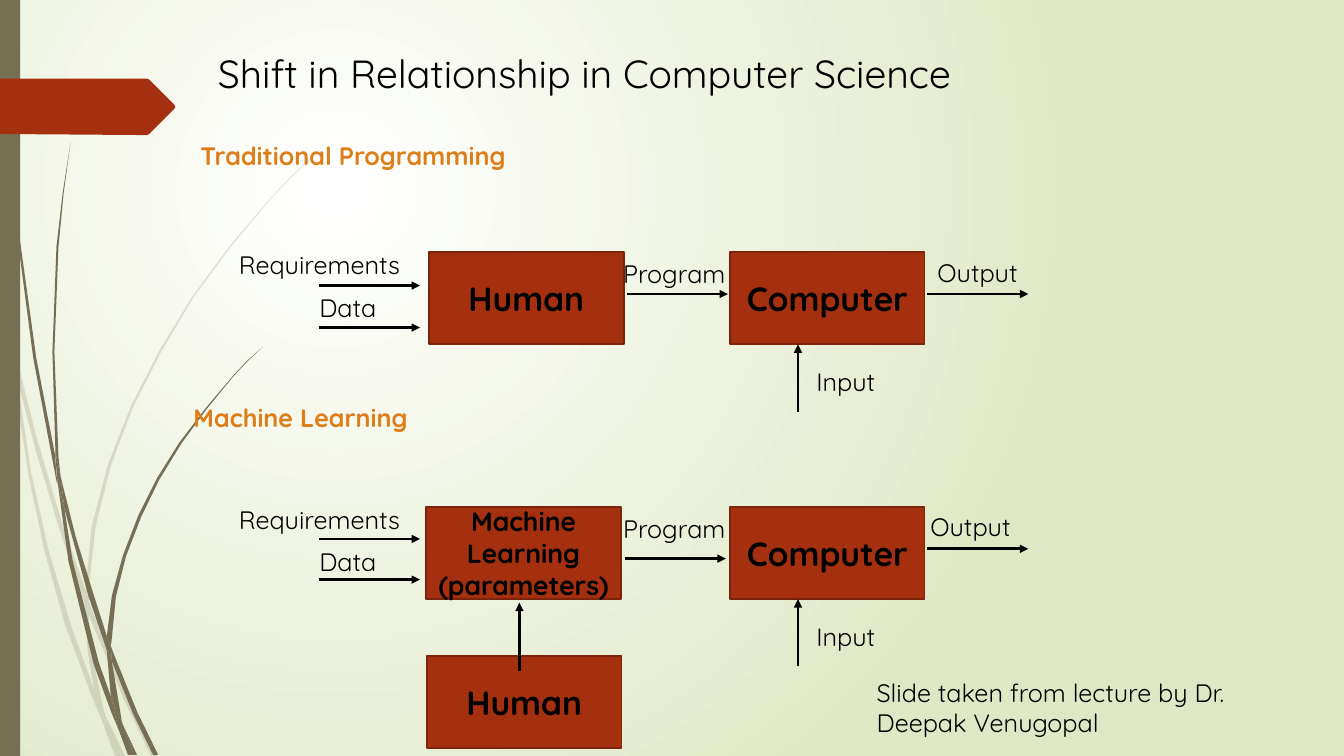
from lxml.etree import SubElement
from pptx import Presentation
from pptx.dml.color import RGBColor
from pptx.enum.shapes import MSO_CONNECTOR as Connector, MSO_SHAPE as Preset
from pptx.enum.text import MSO_ANCHOR as Anchor, MSO_AUTO_SIZE as AutoSize, PP_ALIGN as Align
from pptx.oxml.ns import qn
from pptx.util import Pt

FONT = "Quicksand"
BLACK, RUST, DARK_RUST = "000000", "A53010", "7A240C"
ORANGE, OLIVE, WHITE, PALE_GREEN = "DE7E18", "766F54", "FFFFFF", "DFE8C4"
BOX_WIDTH, BOX_HEIGHT = 139, 66
FLOW_STEP = 182  # from the upper flow to the lower one

# Outlines on a grid of 0.72 pt
GRID = Pt(0.72)
FAINT_WISPS = [
    [(11, 350), (9, 322), (0, 282), (0, 299), (10, 344)],
    [(58, 522), (84, 599), (85, 586), (62, 520), (36, 433), (14, 345), (17, 376), (36, 449)],
    [(92, 607), (88, 596), (88, 610), (123, 694), (150, 750), (155, 750), (127, 692)],
    [(119, 750), (124, 750), (105, 711)],
    [(93, 683), (70, 619), (48, 545), (31, 469), (17, 376), (11, 350), (19, 410), (28, 470),
     (44, 546), (65, 621), (92, 693), (101, 714), (99, 707)],
    [(84, 599), (87, 646), (93, 683), (96, 692), (105, 711), (103, 706), (91, 646), (88, 610),
     (88, 608)],
    [(88, 584), (95, 522), (110, 462), (132, 404), (160, 349), (192, 295), (229, 245),
     (268, 198), (290, 175), (312, 154), (312, 153), (289, 175), (268, 197), (228, 244),
     (191, 294), (158, 348), (130, 403), (107, 461), (91, 522), (85, 584), (85, 586), (88, 596)],
    [(101, 714), (114, 750), (119, 750)],
    [(88, 608), (88, 610), (88, 596), (85, 586), (84, 599)],
    [(96, 692), (93, 683), (99, 707), (101, 714), (119, 750), (105, 711)],
]
SOLID_WISPS = [
    [(7, 110), (11, 171), (17, 233), (33, 355), (56, 477), (57, 481), (55, 457), (55, 453),
     (36, 355), (19, 232), (8, 109), (5, 48), (4, 0), (3, 0), (4, 48)],
    [(88, 592), (106, 645), (106, 633), (106, 631), (93, 590), (75, 532), (60, 472), (64, 505)],
    [(113, 649), (110, 641), (111, 656), (132, 708), (152, 749), (157, 749), (136, 706)],
    [(110, 691), (98, 657), (72, 556), (64, 505), (57, 477), (68, 557), (93, 659), (111, 708),
     (117, 722), (116, 717)],
    [(60, 472), (58, 453), (54, 349), (58, 245), (63, 193), (70, 141), (62, 193), (56, 245),
     (52, 349), (55, 449)],
    [(133, 749), (136, 749), (122, 719)],
    [(57, 477), (64, 505), (60, 472), (55, 449), (55, 453)],
    [(111, 633), (115, 592), (125, 552), (140, 513), (158, 476), (180, 440), (205, 406),
     (231, 374), (245, 359), (261, 344), (245, 358), (231, 373), (204, 405), (178, 439),
     (156, 474), (137, 512), (122, 551), (111, 591), (106, 631), (110, 641)],
    [(117, 722), (127, 749), (131, 749)],
    [(106, 645), (110, 691), (116, 706), (122, 719), (121, 716), (111, 656), (109, 651)],
    [(106, 645), (109, 651), (111, 656), (110, 641), (106, 631), (106, 633)],
    [(116, 706), (110, 691), (116, 717), (117, 722), (130, 749), (133, 749), (122, 719)],
]
MARKER = [(173, 108), (148, 133), (146, 134), (136, 134), (0, 133), (0, 78), (136, 78),
          (146, 78), (148, 79), (173, 104), (174, 106)]


def rgb(value):
    return RGBColor.from_string(value)


def apply_format(target, values):
    for attribute, value in values.items():
        setattr(target, attribute, value)


def write(paragraph, text, size=18, color=BLACK, bold=False, **layout):
    run = paragraph.add_run()
    run.text = text
    apply_format(run.font, {"name": FONT, "size": Pt(size), "bold": bold})
    run.font.color.rgb = rgb(color)
    apply_format(paragraph, layout)


def paint(shape, color, border=None):
    shape.shadow.inherit = False
    shape.fill.solid()
    shape.fill.fore_color.rgb = rgb(color)
    if border:
        shape.line.color.rgb = rgb(border)
        shape.line.width = Pt(1.25)
    else:
        shape.line.fill.background()


def add_outline(slide, points, color, alpha=None):
    builder = slide.shapes.build_freeform(*points[0], scale=GRID)
    builder.add_line_segments(points[1:], close=True)
    outline = builder.convert_to_shape()
    paint(outline, color)
    if alpha:
        solid = outline.fill._xPr.find(qn("a:solidFill"))
        SubElement(solid[0], qn("a:alpha"), val=str(alpha * 1000))


def add_box(slide, left, top, text, size=24):
    box = slide.shapes.add_shape(Preset.RECTANGLE, Pt(left), Pt(top), Pt(BOX_WIDTH), Pt(BOX_HEIGHT))
    paint(box, RUST, DARK_RUST)
    apply_format(box.text_frame, {"word_wrap": True, "vertical_anchor": Anchor.MIDDLE})
    write(box.text_frame.paragraphs[0], text, size, bold=True, alignment=Align.CENTER)


def add_label(slide, left, top, width, text, height=29):
    label = slide.shapes.add_textbox(Pt(left), Pt(top), Pt(width), Pt(height))
    label.text_frame.word_wrap = True
    write(label.text_frame.paragraphs[0], text)


def add_arrow(slide, x1, y1, x2, y2):
    arrow = slide.shapes.add_connector(Connector.STRAIGHT, Pt(x1), Pt(y1), Pt(x2), Pt(y2))
    arrow.line.color.rgb = rgb(BLACK)
    arrow.line.width = Pt(2)
    SubElement(arrow.line._get_or_add_ln(), qn("a:tailEnd"), type="triangle")
    SubElement(arrow._element.spPr, qn("a:effectLst"))


def place_placeholder(holder, left, top, width, height):
    apply_format(holder, {"left": Pt(left), "top": Pt(top), "width": Pt(width), "height": Pt(height)})
    apply_format(holder.text_frame, {"word_wrap": True, "vertical_anchor": Anchor.TOP,
                                     "auto_size": AutoSize.NONE})
    holder._element.getparent().append(holder._element)  # in front of the decoration


def add_background(slide):
    fill = slide.background.fill
    fill.gradient()
    for stop, color in zip(fill.gradient_stops, (WHITE, PALE_GREEN)):
        stop.color.rgb = rgb(color)
    gradient = slide._element.find(".//" + qn("a:gradFill"))
    gradient.remove(gradient.find(qn("a:lin")))
    circle = SubElement(gradient, qn("a:path"), path="circle")
    SubElement(circle, qn("a:fillToRect"), l="50000", t="50000", r="100000", b="100000")


def add_decoration(slide):
    for wisp in FAINT_WISPS:
        add_outline(slide, wisp, OLIVE, alpha=20)
    for wisp in SOLID_WISPS:
        add_outline(slide, wisp, OLIVE)
    side_bar = slide.shapes.add_shape(Preset.RECTANGLE, 0, 0, Pt(14.4), Pt(540))
    paint(side_bar, OLIVE)
    add_outline(slide, MARKER, RUST)


def add_headings(slide):
    title, sections = slide.placeholders
    place_placeholder(sections, 126, 96.5, 654, 389)
    frame = sections.text_frame
    for paragraph, text, indent, gap in (
            (frame.paragraphs[0], "Traditional Programming", 10, 0),
            (frame.add_paragraph(), "Machine Learning", 5, 166)):
        write(paragraph, text, color=ORANGE, bold=True, space_before=Pt(gap), alignment=Align.LEFT)
        properties = paragraph._p.get_or_add_pPr()
        properties.set("marL", str(Pt(indent)))
        properties.set("indent", "0")
        SubElement(properties, qn("a:buNone"))
    place_placeholder(title, 148.5, 31.5, 658, 41)
    write(title.text_frame.paragraphs[0], "Shift in Relationship in Computer Science", 28,
          alignment=Align.LEFT)


def add_flow(slide, top, worker, worker_left, worker_size, input_arrows, program_arrow,
             output_left):
    add_box(slide, worker_left, top, worker, worker_size)
    add_box(slide, 521.5, top, "Computer")
    for left, drop, width, text in ((163.5, -5.5, 144, "Requirements"), (221, 25, 59, "Data"),
                                    (438, 1, 90, "Program"), (576, 78, 86.5, "Input"),
                                    (output_left, 0, 86.5, "Output")):
        add_label(slide, left, top + drop, width, text)
    program_left, program_y = program_arrow
    for left, y in ((228, input_arrows[0]), (228, input_arrows[1]),
                    (program_left, program_y), (662.5, top + 30)):
        add_arrow(slide, left, y, left + 72, y)
    add_arrow(slide, 570, top + 114, 570, top + 66)


def main():
    prs = Presentation()
    prs.slide_width, prs.slide_height = Pt(960), Pt(540)
    slide = prs.slides.add_slide(prs.slide_layouts[1])
    add_background(slide)
    add_decoration(slide)
    add_headings(slide)

    # Traditional programming, then machine learning
    add_flow(slide, 180, "Human", 306.5, 24, (204, 234), (448, 210), 662.5)
    add_flow(slide, 180 + FLOW_STEP, "Machine Learning (parameters)", 304.5, 19, (385, 414),
             (446.5, 399), 657.5)

    # Human who supports the learning step
    add_box(slide, 305, 468.5, "Human")
    add_arrow(slide, 371, 479, 371, 430.5)
    add_label(slide, 619, 480, 311, "Slide taken from lecture by Dr. Deepak Venugopal", 51)
    prs.save("out.pptx")


if __name__ == "__main__":
    main()
